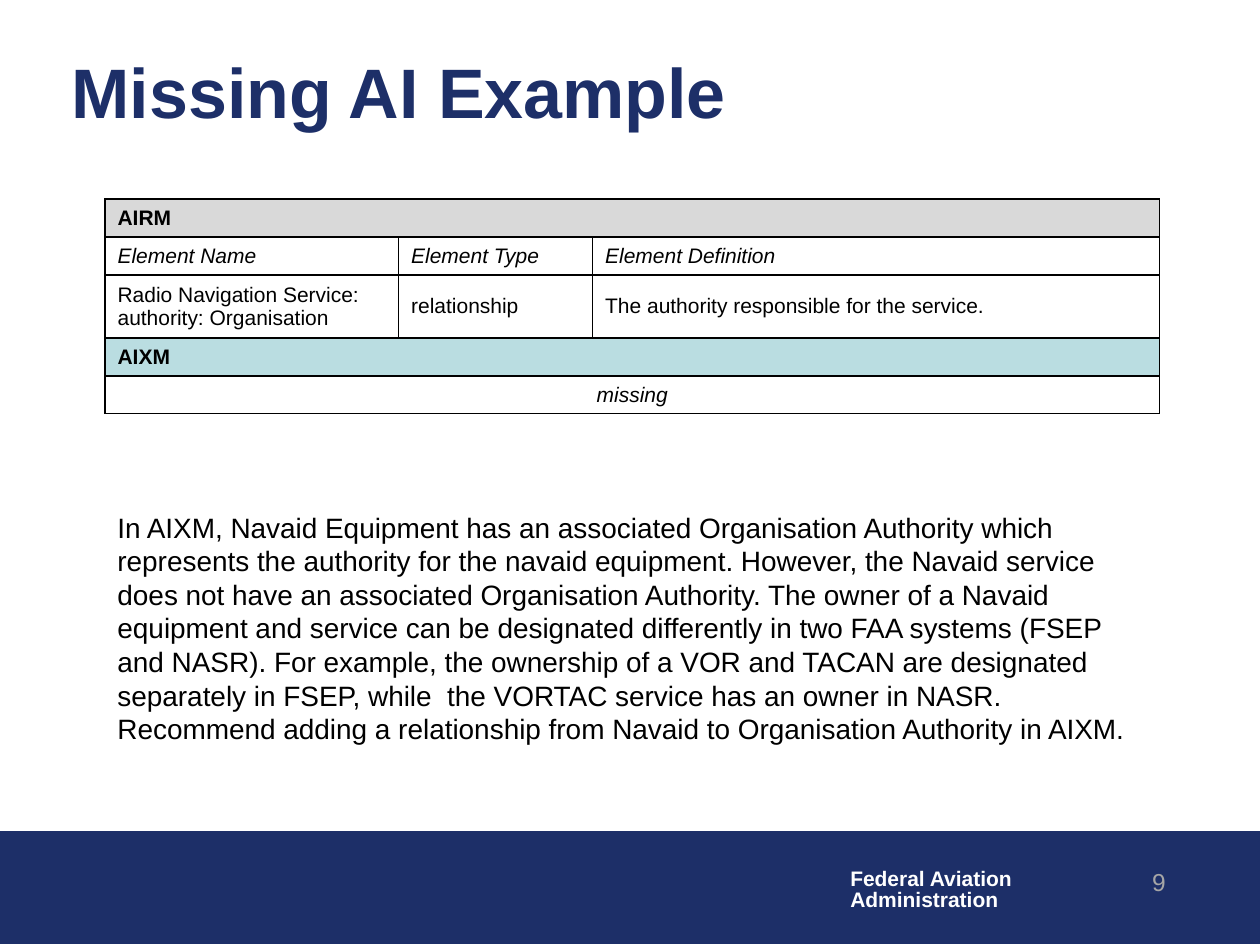
import pptx
import pptx.dml.color
import pptx.enum.shapes
import pptx.enum.text
import pptx.util
from lxml import etree
from pptx.oxml import ns

Pt = pptx.util.Pt
RGBColor = pptx.dml.color.RGBColor
ALIGN = pptx.enum.text.PP_ALIGN
MIDDLE = pptx.enum.text.MSO_ANCHOR.MIDDLE

NAVY = RGBColor(0x1D, 0x2F, 0x68)
WHITE = RGBColor(0xFF, 0xFF, 0xFF)
BLACK = RGBColor(0, 0, 0)
MUTED = RGBColor(0xA6, 0xA6, 0xA6)
GREY = RGBColor(0xD9, 0xD9, 0xD9)
AQUA = RGBColor(0xBA, 0xDD, 0xE1)

COLUMNS = (167.76, 110.88, 324)
ROW_HEIGHT = 19.5
# Texts, fill, bold, italic, alignment; a single text spans the whole row.
ROWS = (
    (("AIRM",), GREY, True, False, ALIGN.LEFT),
    (("Element Name", "Element Type", "Element Definition"), None, False, True, ALIGN.LEFT),
    (("Radio Navigation Service: authority: Organisation", "relationship",
      "The authority responsible for the service."), None, False, False, ALIGN.LEFT),
    (("AIXM",), AQUA, True, False, ALIGN.LEFT),
    (("missing",), None, False, True, ALIGN.CENTER),
)
EXPLANATION = (
    "In AIXM, Navaid Equipment has an associated Organisation Authority which represents "
    "the authority for the navaid equipment. However, the Navaid service does not have an "
    "associated Organisation Authority. The owner of a Navaid equipment and service can be "
    "designated differently in two FAA systems (FSEP and NASR). For example, the ownership "
    "of a VOR and TACAN are designated separately in FSEP, while  the VORTAC service has an "
    "owner in NASR. Recommend adding a relationship from Navaid to Organisation Authority "
    "in AIXM."
)


def write(frame, text, size, color, bold=False, italic=False, align=ALIGN.LEFT, spacing=None):
    frame.text = text
    for para in frame.paragraphs:
        para.alignment = align
        if spacing:
            para.line_spacing = spacing
        for span in para.runs:
            font = span.font
            font.name, font.size = "Arial", Pt(size)
            font.bold, font.italic = bold, italic
            font.color.rgb = color


def add_text(page, left, top, width, height, text, size, color, wrap=True, **style):
    box = page.shapes.add_textbox(Pt(left), Pt(top), Pt(width), Pt(height))
    box.text_frame.word_wrap = wrap
    write(box.text_frame, text, size, color, **style)


def place_title(page, left, top, width, height):
    title = page.shapes.title
    title.left, title.top, title.width, title.height = Pt(left), Pt(top), Pt(width), Pt(height)
    title.text_frame.vertical_anchor = MIDDLE
    write(title.text_frame, "Missing AI Example", 40, NAVY, bold=True)


def add_footer(page, left, top, width, height):
    band = page.shapes.add_shape(pptx.enum.shapes.MSO_SHAPE.RECTANGLE,
                                 Pt(left), Pt(top), Pt(width), Pt(height))
    band.shadow.inherit = False
    band.fill.solid()
    band.fill.fore_color.rgb = NAVY
    band.line.color.rgb = NAVY
    band.line.width = Pt(0.75)
    add_text(page, left + 478.8, top + 18, 108, 31.7, "Federal Aviation\nAdministration",
             12, WHITE, wrap=False, bold=True, spacing=0.85)
    add_text(page, left + 586.8, top + 16.6, 86.4, 36, "9", 14, MUTED, align=ALIGN.RIGHT)


def outline_cell(cell):
    """Draw the four cell borders, ahead of the fill as the schema requires."""
    properties = cell._tc.get_or_add_tcPr()
    for index, side in enumerate(("lnL", "lnR", "lnT", "lnB")):
        line = etree.Element(ns.qn("a:" + side), w=str(Pt(1)))
        fill = etree.SubElement(line, ns.qn("a:solidFill"))
        etree.SubElement(fill, ns.qn("a:srgbClr"), val=str(BLACK))
        properties.insert(index, line)


def add_comparison_table(page, left, top):
    table = page.shapes.add_table(len(ROWS), len(COLUMNS), Pt(left), Pt(top),
                                  Pt(sum(COLUMNS)), Pt(ROW_HEIGHT * len(ROWS))).table
    table.first_row = table.horz_banding = False
    for column, width in zip(table.columns, COLUMNS):
        column.width = Pt(width)
    last = len(COLUMNS) - 1
    for index, (texts, fill, bold, italic, align) in enumerate(ROWS):
        table.rows[index].height = Pt(ROW_HEIGHT)
        if len(texts) == 1:
            table.cell(index, 0).merge(table.cell(index, last))
        for column, text in enumerate(texts):
            cell = table.cell(index, column)
            cell.vertical_anchor = MIDDLE
            write(cell.text_frame, text, 12, BLACK, bold, italic, align)
        for column in range(len(COLUMNS)):
            cell = table.cell(index, column)
            if fill is None:
                cell.fill.background()
            else:
                cell.fill.solid()
                cell.fill.fore_color.rgb = fill
            outline_cell(cell)


def main():
    deck = pptx.Presentation()
    deck.slide_width, deck.slide_height = Pt(720), Pt(540)
    page = deck.slides.add_slide(deck.slide_layouts.get_by_name("Title Only"))
    add_footer(page, 0, 475.2, 720, 64.1)
    place_title(page, 33.8, 27.4, 667.4, 48.2)
    add_comparison_table(page, 60, 113.8)
    add_text(page, 60, 288, 600, 149.8, EXPLANATION, 16, BLACK)
    deck.save("out.pptx")


if __name__ == "__main__":
    main()
